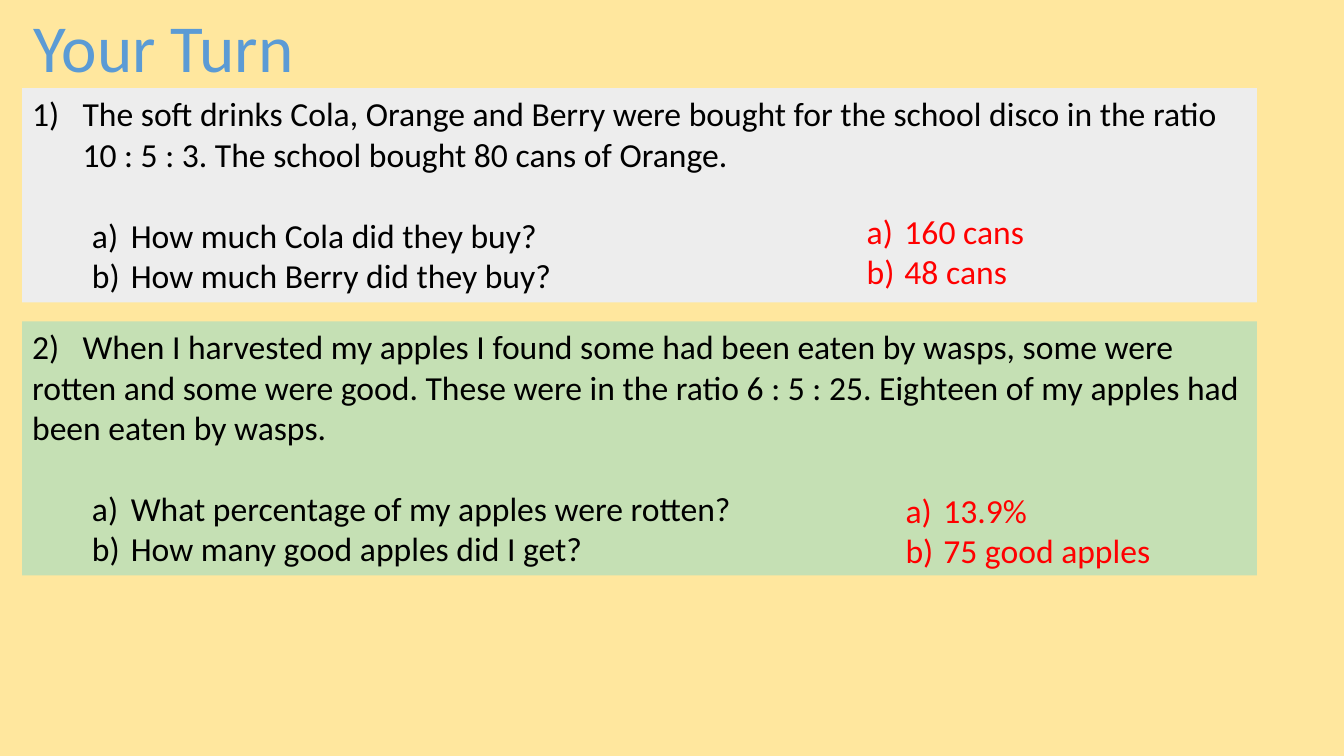
from lxml import etree
from pptx import Presentation
from pptx.dml.color import RGBColor
from pptx.enum.text import MSO_ANCHOR, MSO_AUTO_SIZE, PP_ALIGN
from pptx.oxml.ns import qn
from pptx.util import Pt

PX = 9525
CENTER = PP_ALIGN.CENTER
TOP = MSO_ANCHOR.TOP
NO_AUTOFIT = MSO_AUTO_SIZE.NONE
FONT = "Calibri"
COLORS = {
    "background": "FFE79E",
    "title": "5B9BD5",
    "question": "000000",
    "answer": "FF0000",
    "grey panel": "EDEDED",
    "green panel": "C5E0B4",
}


def place(shape, left, top, width, height):
    shape.left, shape.top = left * PX, top * PX
    shape.width, shape.height = width * PX, height * PX
    shape.text_frame.auto_size = NO_AUTOFIT
    shape.text_frame.vertical_anchor = TOP


def write_lines(text_frame, lines, color):
    text_frame.word_wrap = True
    for index, (text, numbering, margin, hanging, gap) in enumerate(lines):
        paragraph = text_frame.paragraphs[0] if index == 0 else text_frame.add_paragraph()
        paragraph.text = text
        paragraph.level = 1 if numbering == "alphaLcParenR" else 0
        paragraph.space_before = Pt(gap)
        properties = paragraph._p.get_or_add_pPr()
        properties.set("marL", str(margin * PX))
        properties.set("indent", str(-hanging * PX))
        if numbering:
            etree.SubElement(properties, qn("a:buFont"), typeface=FONT)
            etree.SubElement(properties, qn("a:buAutoNum"), type=numbering)
        else:
            etree.SubElement(properties, qn("a:buNone"))
            tabs = etree.SubElement(properties, qn("a:tabLst"))
            etree.SubElement(tabs, qn("a:tab"), pos=str(40 * PX), algn="l")
        for run in paragraph.runs:
            run.font.name = FONT
            run.font.size = Pt(24)
            run.font.color.rgb = RGBColor.from_string(COLORS[color])


presentation = Presentation()
presentation.slide_width = 1280 * PX
presentation.slide_height = 720 * PX
slide = presentation.slides.add_slide(presentation.slide_layouts[3])
slide.background.fill.solid()
slide.background.fill.fore_color.rgb = RGBColor.from_string(COLORS["background"])

title = slide.shapes.title
place(title, 21, 0, 270, 87)
title.text_frame.text = "Your Turn"
title.text_frame.word_wrap = False
title_paragraph = title.text_frame.paragraphs[0]
title_paragraph.alignment = CENTER
title_font = title_paragraph.runs[0].font
title_font.name = FONT
title_font.size = Pt(48)
title_font.color.rgb = RGBColor.from_string(COLORS["title"])

questions = [
    {
        "panel": (21, 84, 1176, 204),
        "fill": "grey panel",
        "intro": (
            "The soft drinks Cola, Orange and Berry were bought for the school disco in the ratio "
            "10 : 5 : 3. The school bought 80 cans of Orange.",
            "arabicParenR", 48, 48, 0,
        ),
        "parts": ["How much Cola did they buy?", "How much Berry did they buy?"],
        "answer box": (816, 196, 227, 87),
        "answers": ["160 cans", "48 cans"],
    },
    {
        "panel": (21, 306, 1176, 242),
        "fill": "green panel",
        "intro": (
            "2)\tWhen I harvested my apples I found some had been eaten by wasps, some were rotten "
            "and some were good. These were in the ratio 6 : 5 : 25. Eighteen of my apples had "
            "been eaten by wasps.",
            None, 0, 0, 0,
        ),
        "parts": ["What percentage of my apples were rotten?", "How many good apples did I get?"],
        "answer box": (853, 462, 299, 87),
        "answers": ["13.9%", "75 good apples"],
    },
]

for number, question in enumerate(questions, start=1):
    panel = slide.placeholders[number]
    place(panel, *question["panel"])
    panel.fill.solid()
    panel.fill.fore_color.rgb = RGBColor.from_string(COLORS[question["fill"]])
    parts = [
        (part, "alphaLcParenR", 94, 37, 0 if index else 29)
        for index, part in enumerate(question["parts"])
    ]
    write_lines(panel.text_frame, [question["intro"]] + parts, "question")

    answer_box = slide.shapes.add_textbox(0, 0, PX, PX)
    place(answer_box, *question["answer box"])
    answers = [(answer, "alphaLcParenR", 36, 36, 0) for answer in question["answers"]]
    write_lines(answer_box.text_frame, answers, "answer")

presentation.save("out.pptx")
